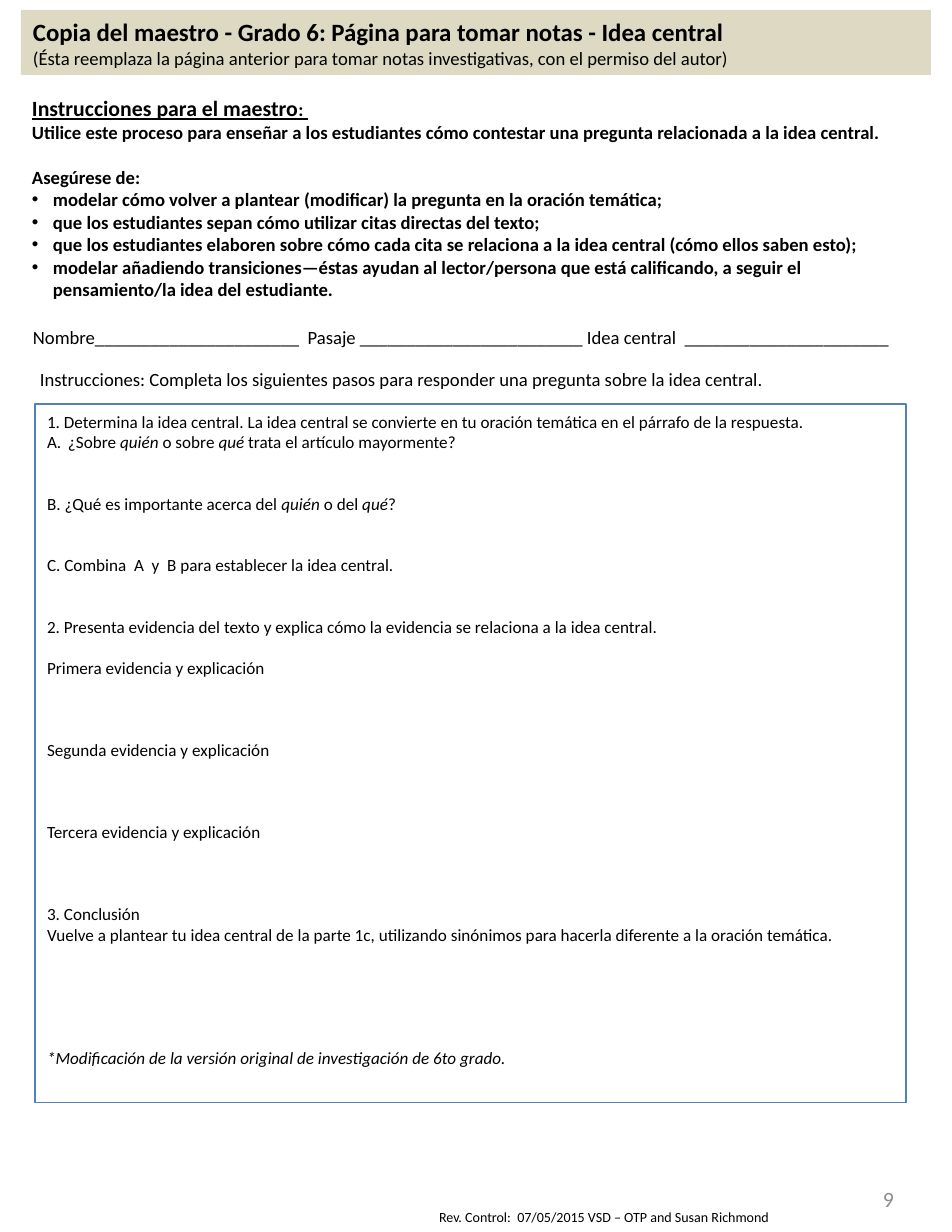
from dataclasses import dataclass

from lxml.etree import SubElement
from pptx import Presentation
from pptx.dml.color import RGBColor
from pptx.enum.shapes import MSO_SHAPE
from pptx.enum.text import MSO_ANCHOR, PP_ALIGN
from pptx.oxml.ns import qn
from pptx.util import Emu, Pt

SCALE = 914400 / 112


@dataclass(frozen=True)
class Theme:
    face: str = "Calibri"
    ink: str = "000000"
    gray: str = "8C8C8C"
    sand: str = "DDD9C3"
    blue: str = "4F81BD"
    white: str = "FFFFFF"
    title: int = 16
    head: int = 14
    body: int = 12
    step: int = 11
    foot: int = 9
    pitch: float = 1.2
    rule: float = 0.75


LOOK = Theme()


@dataclass(frozen=True)
class Span:
    text: str
    slant: bool = False
    size: int = 0


@dataclass(frozen=True)
class Para:
    spans: tuple[Span, ...]
    size: int = LOOK.body
    bold: bool = False
    slant: bool = False
    under: bool = False
    mark: str = ""
    gap: int = 0
    color: str = LOOK.ink
    align: PP_ALIGN = PP_ALIGN.LEFT


@dataclass(frozen=True)
class Box:
    left: int
    top: int
    width: int
    height: int
    paras: tuple[Para, ...]
    fill: str = ""
    line: str = ""
    pad: tuple[int, int] = (12, 7)
    anchor: MSO_ANCHOR = MSO_ANCHOR.TOP


def px(size: int) -> Emu:
    return Emu(round(size * SCALE))


def tint(code: str) -> RGBColor:
    return RGBColor.from_string(code)


def para(text: str, **style) -> Para:
    parts = text.split("*")
    spans = tuple(Span(part, n % 2 == 1) for n, part in enumerate(parts) if part)
    return Para(spans, **style)


def step(text: str, gap: int = 0, mark: str = "") -> Para:
    return para(text, size=LOOK.step, gap=gap, mark=mark)


def add_mark(item, mark: str) -> None:
    props = item._p.get_or_add_pPr()
    props.set("marL", str(px(21)))
    props.set("indent", str(-px(21)))
    if mark == "•":
        SubElement(props, qn("a:buFont"), typeface="Arial")
        SubElement(props, qn("a:buChar"), char=mark)
    else:
        SubElement(props, qn("a:buAutoNum"), type=mark)


def write(item, data: Para) -> None:
    item.alignment = data.align
    item.space_before = Pt(round(data.gap * data.size * LOOK.pitch, 1))
    if data.mark:
        add_mark(item, data.mark)
    font = item.font
    font.name, font.size = LOOK.face, Pt(data.size)
    font.bold, font.italic, font.underline = data.bold, data.slant, data.under
    font.color.rgb = tint(data.color)
    for span in data.spans:
        run = item.add_run()
        run.text = span.text
        if span.slant:
            run.font.italic = True
        if span.size:
            run.font.size = Pt(span.size)


def draw(slide, box: Box) -> None:
    place = [px(n) for n in (box.left, box.top, box.width, box.height)]
    if box.fill:
        shape = slide.shapes.add_shape(MSO_SHAPE.RECTANGLE, *place)
        shape.shadow.inherit = False
        shape.fill.solid()
        shape.fill.fore_color.rgb = tint(box.fill)
        if box.line:
            shape.line.color.rgb = tint(box.line)
            shape.line.width = Pt(LOOK.rule)
        else:
            shape.line.fill.background()
    else:
        shape = slide.shapes.add_textbox(*place)
    frame = shape.text_frame
    frame.word_wrap = True
    frame.vertical_anchor = box.anchor
    frame.margin_left = frame.margin_right = px(box.pad[0])
    frame.margin_top = frame.margin_bottom = px(box.pad[1])
    for n, data in enumerate(box.paras):
        write(frame.add_paragraph() if n else frame.paragraphs[0], data)


GOALS = (
    "modelar cómo volver a plantear (modificar) la pregunta en la oración temática;",
    "que los estudiantes sepan cómo utilizar citas directas del texto;",
    "que los estudiantes elaboren sobre cómo cada cita se relaciona a la idea central (cómo ellos saben esto);",
    "modelar añadiendo transiciones—éstas ayudan al lector/persona que está calificando, a seguir el "
    "pensamiento/la idea del estudiante.",
)

STEPS = (
    step("1. Determina la idea central. La idea central se convierte en tu oración temática "
         "en el párrafo de la respuesta."),
    step("¿Sobre *quién* o sobre *qué* trata el artículo mayormente?", mark="alphaUcPeriod"),
    step("B. ¿Qué es importante acerca del *quién* o del *qué*?", 2),
    step("C. Combina  A  y  B para establecer la idea central.", 2),
    step("2. Presenta evidencia del texto y explica cómo la evidencia se relaciona a la idea central.", 2),
    step("Primera evidencia y explicación", 1),
    step("Segunda evidencia y explicación", 3),
    step("Tercera evidencia y explicación", 3),
    step("3. Conclusión", 3),
    step("Vuelve a plantear tu idea central de la parte 1c, utilizando sinónimos para hacerla "
         "diferente a la oración temática."),
    Para((Span("*Modificación de la versión original de investigación de 6to grado."),),
         size=LOOK.step, slant=True, gap=5),
)

GUIDE = (
    Para((Span("Instrucciones para el maestro"), Span(": ", size=LOOK.body)),
         size=LOOK.head, bold=True, under=True),
    para("Utilice este proceso para enseñar a los estudiantes cómo contestar una pregunta "
         "relacionada a la idea central.", bold=True),
    para("Asegúrese de:", bold=True, gap=1),
    *(para(goal, bold=True, mark="•") for goal in GOALS),
)

BOXES = (
    Box(427, 1203, 476, 29,
        (para("Rev. Control:  07/05/2015 VSD – OTP and Susan Richmond", size=LOOK.foot),), pad=(12, 6)),
    Box(35, 404, 871, 699, STEPS, LOOK.white, LOOK.blue),
    Box(21, 319, 910, 35,
        (para(f"Nombre{'_' * 22}  Pasaje {'_' * 24} Idea central  {'_' * 22}"),)),
    Box(21, 10, 910, 65, (
        para("Copia del maestro - Grado 6: Página para tomar notas - Idea central", size=LOOK.title, bold=True),
        para("(Ésta reemplaza la página anterior para tomar notas investigativas, con el permiso del autor)"),
    ), LOOK.sand),
    Box(803, 1166, 103, 66,
        (para("9", size=LOOK.head, color=LOOK.gray, align=PP_ALIGN.RIGHT),), anchor=MSO_ANCHOR.MIDDLE),
    Box(21, 89, 885, 218, GUIDE, pad=(11, 6)),
    Box(29, 362, 878, 34,
        (para("Instrucciones: Completa los siguientes pasos para responder una pregunta sobre la idea central."),),
        pad=(11, 6)),
)


def main() -> None:
    deck = Presentation()
    deck.slide_width, deck.slide_height = px(952), px(1232)
    slide = deck.slides.add_slide(deck.slide_layouts[6])
    for box in BOXES:
        draw(slide, box)
    deck.save("out.pptx")


if __name__ == "__main__":
    main()
